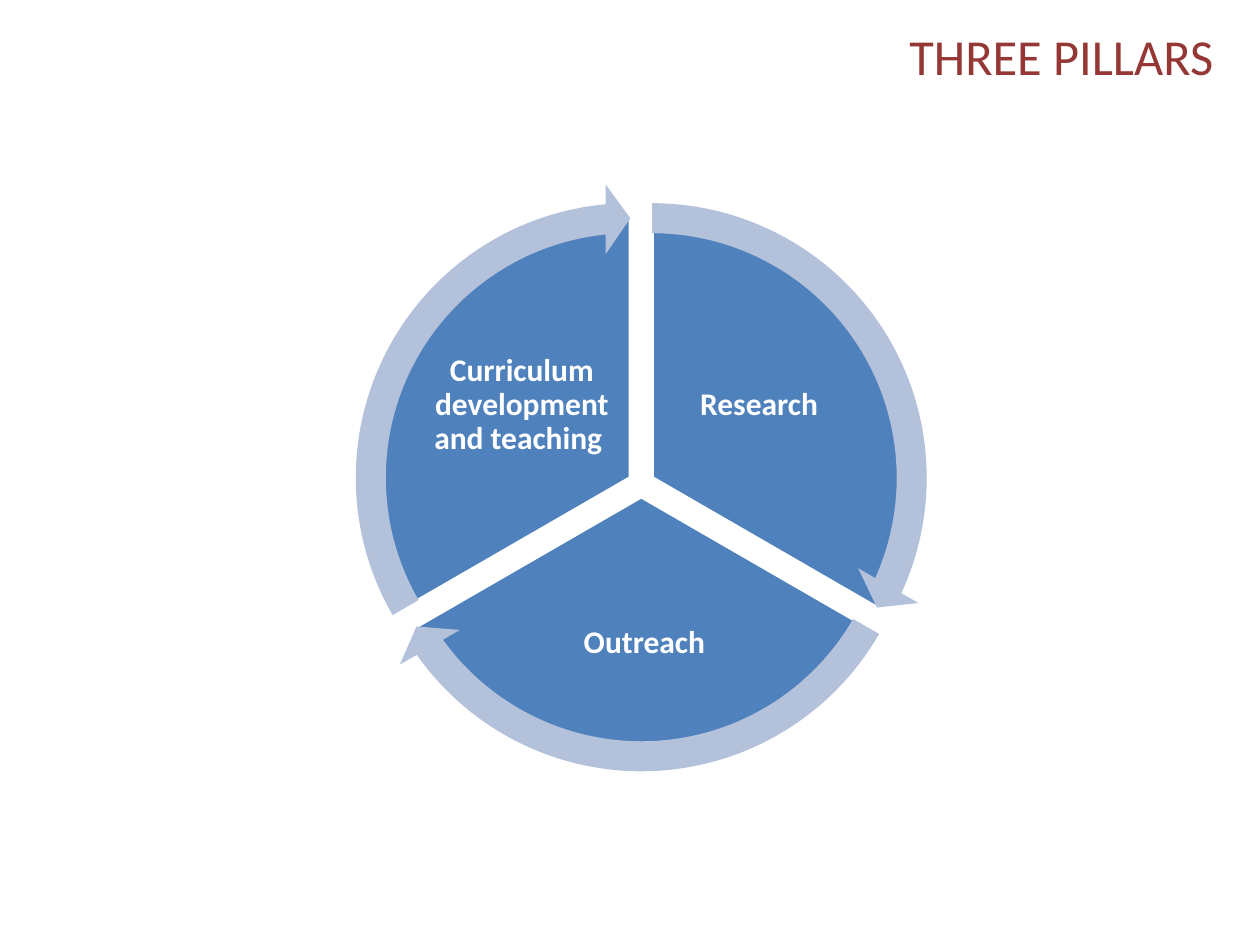
from dataclasses import dataclass
from math import cos, radians, sin

from pptx import Presentation
from pptx.dml.color import RGBColor as RGB
from pptx.enum.shapes import MSO_SHAPE as Shape
from pptx.enum.text import MSO_ANCHOR as Anchor, PP_ALIGN as Align
from pptx.util import Inches, Pt

WIDE, HIGH = 10, 7.5
TURN = 0.6  # adjustment units in one degree


@dataclass(frozen=True)
class Theme:
    face: str = "Calibri"
    head: RGB = RGB(0x95, 0x37, 0x35)
    slice: RGB = RGB(0x4F, 0x81, 0xBD)
    arrow: RGB = RGB(0xB3, 0xC1, 0xDB)
    light: RGB = RGB(0xFF, 0xFF, 0xFF)
    big: float = 28.8
    body: float = 18


LOOK = Theme()

# Label, start angle, label box as shares of the slice's box
PILLARS = [
    ("Research", 270, (0.526, 0.212, 0.356, 0.298)),
    ("Outreach", 30, (0.238, 0.649, 0.536, 0.262)),
    ("Curriculum development and teaching ", 150, (0.115, 0.212, 0.356, 0.298)),
]


def apply(item, form):
    for name, value in form.items():
        setattr(item, name, value)


def write(frame, text, align, font):
    apply(frame, dict(word_wrap=True, vertical_anchor=Anchor.MIDDLE))
    para = frame.paragraphs[0]
    para.alignment = align
    run = para.add_run()
    run.text = text
    apply(run.font, dict(name=LOOK.face, size=Pt(font["size"]), bold=font["bold"]))
    run.font.color.rgb = font["color"]
    return para


def title(slide, box, text):
    holder = slide.shapes.title
    names = ("left", "top", "width", "height")
    apply(holder, dict(zip(names, map(Inches, box))))
    write(holder.text_frame, text, Align.RIGHT,
          dict(size=LOOK.big, bold=False, color=LOOK.head))


def disc(group, kind, mid, size, color, turns):
    x, y = (Inches(c - size / 2) for c in mid)
    form = group.shapes.add_shape(kind, x, y, Inches(size), Inches(size))
    form.shadow.inherit = False
    form.fill.solid()
    form.fill.fore_color.rgb = color
    form.line.fill.background()
    for i, turn in enumerate(turns):
        form.adjustments[i] = turn
    return form


def label(group, box, text):
    area = group.shapes.add_textbox(*map(Inches, box))
    frame = area.text_frame
    sides = ("left", "top", "right", "bottom")
    apply(frame, {f"margin_{side}": Inches(0.03) for side in sides})
    para = write(frame, text, Align.CENTER,
                 dict(size=LOOK.body, bold=True, color=LOOK.light))
    para.line_spacing = 0.9


def cycle(slide, box, pillars):
    left, top, size = box
    group = slide.shapes.add_group_shape()
    sweep = 360 / len(pillars)
    gap, ring, tip = size * 0.024, size * 1.123, 5.46
    mids = []

    # Slices pushed outwards along their middle angle, with labels
    for text, start, share in pillars:
        mid = radians(start + sweep / 2)
        x = left + size / 2 + gap * cos(mid)
        y = top + size / 2 + gap * sin(mid)
        mids.append((x, y))
        end = (start + sweep) % 360
        pie = disc(group, Shape.PIE, (x, y), size, LOOK.slice,
                   (start * TURN, end * TURN))
        pie.line.color.rgb = LOOK.light
        pie.line.width = Pt(2)
        dx, dy, w, h = (part * size for part in share)
        label(group, (x - size / 2 + dx, y - size / 2 + dy, w, h), text)

    # Arrows around the slices
    for (_, start, _), mid in zip(pillars, mids):
        end = (start + sweep) % 360
        disc(group, Shape.CIRCULAR_ARROW, mid, ring, LOOK.arrow,
             (0.051, tip * TURN, (end - tip) * TURN, start * TURN, 0.059))


def main():
    deck = Presentation()
    apply(deck, dict(slide_width=Inches(WIDE), slide_height=Inches(HIGH)))
    slide = deck.slides.add_slide(deck.slide_layouts[5])
    title(slide, (WIDE * 0.264, HIGH * 0.028, WIDE * 0.709, HIGH * 0.061),
          "THREE PILLARS")
    cycle(slide, (WIDE * 0.301, HIGH * 0.235, WIDE * 0.416), PILLARS)
    deck.save("out.pptx")


if __name__ == "__main__":
    main()
